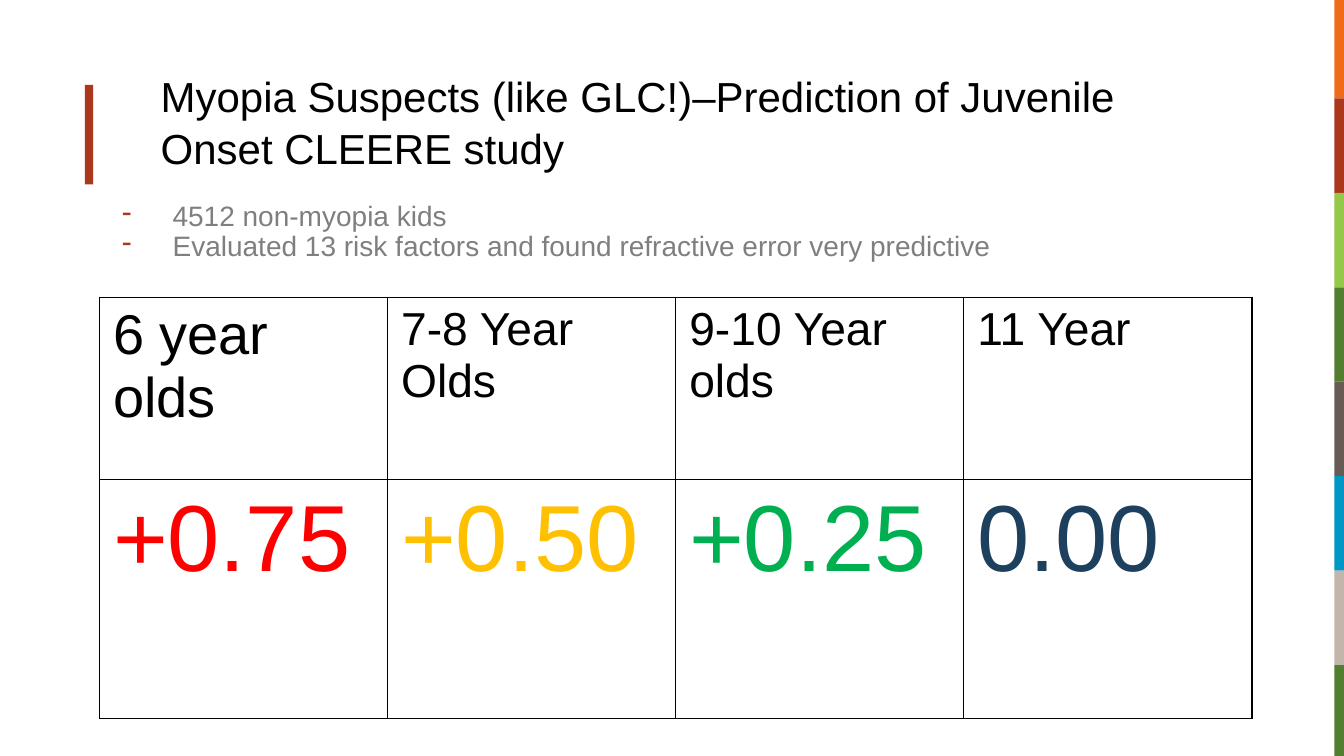
from lxml import etree
from pptx import Presentation
from pptx import util as u
from pptx.dml.color import RGBColor
from pptx.enum import shapes, text
from pptx.oxml.ns import qn

BLACK = RGBColor(0x00, 0x00, 0x00)
GRAY = RGBColor(0x7F, 0x7F, 0x7F)
RUST = RGBColor(0xAB, 0x37, 0x1D)
ORANGE = RGBColor(0xEF, 0x6B, 0x1A)
LIME = RGBColor(0x94, 0xC8, 0x4B)
GREEN = RGBColor(0x53, 0x7D, 0x2F)
BROWN = RGBColor(0x67, 0x5B, 0x54)
BLUE = RGBColor(0x00, 0x97, 0xC4)
SAND = RGBColor(0xC2, 0xB6, 0xAC)
RED = RGBColor(0xFF, 0x00, 0x00)
AMBER = RGBColor(0xFF, 0xC0, 0x00)
EMERALD = RGBColor(0x00, 0xB0, 0x50)
NAVY = RGBColor(0x1C, 0x40, 0x5D)

SLIDE_WIDTH, SLIDE_HEIGHT = 33.87, 19.05
STRIP_COLORS = [ORANGE, RUST, LIME, GREEN, BROWN, BLUE, SAND, GREEN]
STRIP_WIDTH, STRIP_FIRST, STRIP_STEP = 0.24, 2.48, 2.38
FACTS = [
    "4512 non-myopia kids",
    "Evaluated 13 risk factors and found refractive error very predictive",
]
AGE_ROW = [
    ("6 year olds", 40, BLACK),
    ("7-8 Year Olds", 33, BLACK),
    ("9-10 Year olds", 33, BLACK),
    ("11 Year", 33, BLACK),
]
CUTOFF_ROW = [
    ("+0.75", 67, RED),
    ("+0.50", 67, AMBER),
    ("+0.25", 67, EMERALD),
    ("0.00", 67, NAVY),
]


class SlideBuilder:
    """Holds the font, the padding and the slide being filled."""

    font = "Arial"
    padding = u.Cm(0.34)

    def __init__(self, presentation):
        self.slide = presentation.slides.add_slide(presentation.slide_layouts[5])

    def format_runs(self, paragraph, size, color):
        for run in paragraph.runs:
            run.font.name = self.font
            run.font.size = u.Pt(size)
            run.font.color.rgb = color

    def prepare_frame(self, frame, top):
        frame.word_wrap = True
        frame.auto_size = text.MSO_AUTO_SIZE.NONE
        frame.vertical_anchor = text.MSO_ANCHOR.TOP
        frame.margin_left = frame.margin_right = frame.margin_bottom = self.padding
        frame.margin_top = top

    def title(self, wording, left, top, width, height):
        shape = self.slide.shapes.title
        shape.left, shape.top = u.Cm(left), u.Cm(top)
        shape.width, shape.height = u.Cm(width), u.Cm(height)
        self.prepare_frame(shape.text_frame, u.Cm(0.42))
        shape.text_frame.text = wording
        paragraph = shape.text_frame.paragraphs[0]
        paragraph.alignment = text.PP_ALIGN.LEFT
        paragraph.line_spacing = 1.03
        self.format_runs(paragraph, 30, BLACK)

    def block(self, color, left, top, width, height):
        shape = self.slide.shapes.add_shape(
            shapes.MSO_SHAPE.RECTANGLE, u.Cm(left), u.Cm(top), u.Cm(width), u.Cm(height))
        shape.shadow.inherit = False
        shape.fill.solid()
        shape.fill.fore_color.rgb = color
        shape.line.fill.background()

    def bullets(self, lines, left, top, width, height):
        box = self.slide.shapes.add_textbox(
            u.Cm(left), u.Cm(top), u.Cm(width), u.Cm(height))
        frame = box.text_frame
        self.prepare_frame(frame, self.padding)
        frame.text = "\n".join(lines)
        for paragraph in frame.paragraphs:
            properties = paragraph._p.get_or_add_pPr()
            properties.set("marL", str(u.Cm(1.7)))
            properties.set("indent", str(u.Cm(-1.27)))
            bullet_color = etree.SubElement(properties, qn("a:buClr"))
            etree.SubElement(bullet_color, qn("a:srgbClr"), val=str(RUST))
            etree.SubElement(properties, qn("a:buChar"), char="-")
            paragraph.line_spacing = 0.9
            self.format_runs(paragraph, 20, GRAY)

    def borders(self, cell):
        properties = cell._tc.get_or_add_tcPr()
        for side in ("lnL", "lnR", "lnT", "lnB"):
            line = etree.SubElement(properties, qn(f"a:{side}"), w=str(u.Pt(1)))
            fill = etree.SubElement(line, qn("a:solidFill"))
            etree.SubElement(fill, qn("a:srgbClr"), val=str(BLACK))

    def table(self, rows, left, top, column_width, row_heights):
        columns = len(rows[0])
        table = self.slide.shapes.add_table(
            len(rows), columns, u.Cm(left), u.Cm(top),
            u.Cm(column_width * columns), u.Cm(sum(row_heights))).table
        table.first_row = table.horz_banding = False
        for column in table.columns:
            column.width = u.Cm(column_width)
        for row, height, entries in zip(table.rows, row_heights, rows):
            row.height = u.Cm(height)
            for cell, (wording, size, color) in zip(row.cells, entries):
                cell.margin_left = cell.margin_right = self.padding
                cell.margin_top = cell.margin_bottom = u.Cm(0.17)
                self.borders(cell)
                cell.fill.background()
                cell.text_frame.text = wording
                self.format_runs(cell.text_frame.paragraphs[0], size, color)


def main():
    presentation = Presentation()
    presentation.slide_width = u.Cm(SLIDE_WIDTH)
    presentation.slide_height = u.Cm(SLIDE_HEIGHT)
    builder = SlideBuilder(presentation)

    builder.block(RUST, 2.14, 2.14, 0.21, 2.51)
    for index, color in enumerate(STRIP_COLORS):
        bottom = min(STRIP_FIRST + index * STRIP_STEP, SLIDE_HEIGHT)
        top = max(STRIP_FIRST + (index - 1) * STRIP_STEP, 0) if index else 0
        builder.block(color, SLIDE_WIDTH - STRIP_WIDTH, top, STRIP_WIDTH, bottom - top)

    builder.title(
        "Myopia Suspects (like GLC!)–Prediction of Juvenile Onset CLEERE study",
        3.71, 1.32, 27.53, 2.54)
    builder.bullets(FACTS, 2.31, 4.75, 31.55, 4.11)
    builder.table([AGE_ROW, CUTOFF_ROW], 2.51, 7.49, 7.26, [4.6, 6.02])
    presentation.save("out.pptx")


if __name__ == "__main__":
    main()
